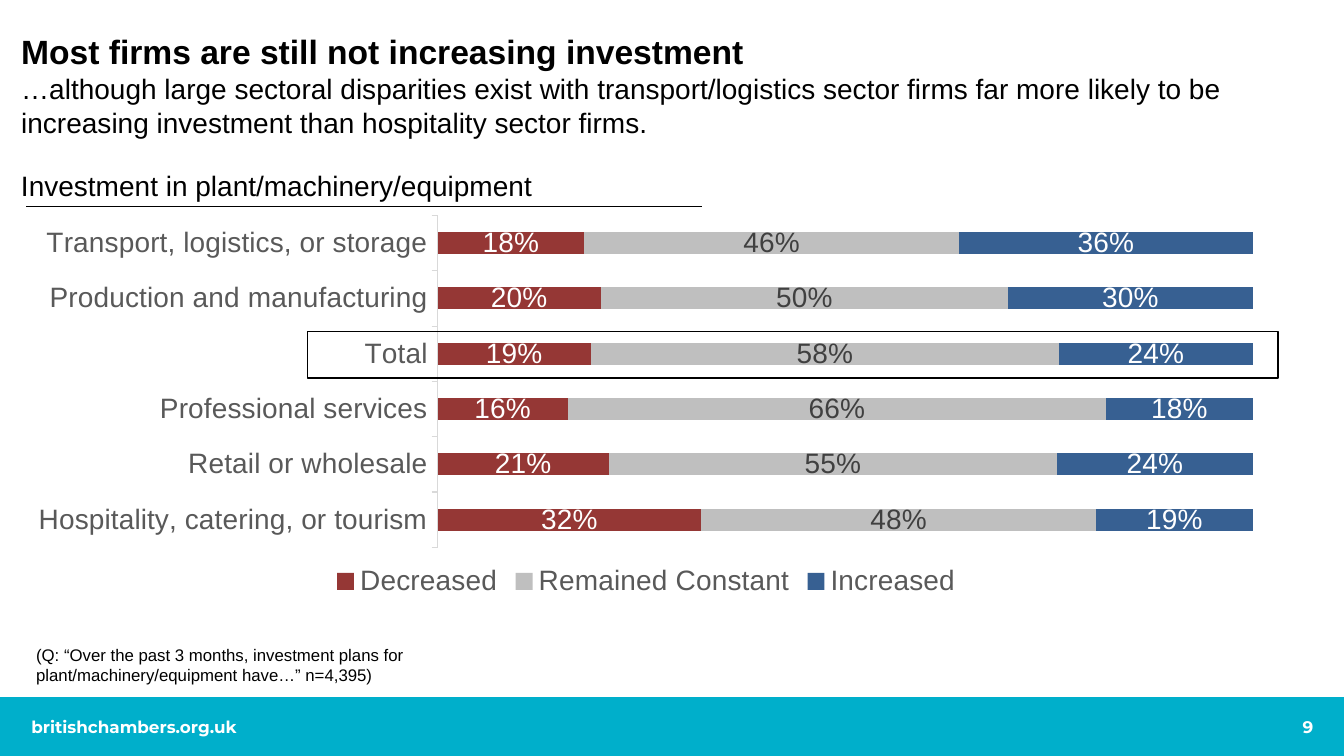
from lxml.etree import SubElement
from pptx import Presentation
from pptx.chart.data import CategoryChartData
from pptx.dml.color import RGBColor
from pptx.enum.chart import XL_CHART_TYPE as ChartType
from pptx.enum.chart import XL_LABEL_POSITION as LabelPosition
from pptx.enum.chart import XL_LEGEND_POSITION as LegendPosition
from pptx.enum.chart import XL_TICK_MARK as TickMark
from pptx.enum.shapes import MSO_CONNECTOR as Connector
from pptx.enum.shapes import MSO_SHAPE as Shape
from pptx.enum.text import MSO_ANCHOR as Anchor
from pptx.enum.text import MSO_AUTO_SIZE as AutoSize
from pptx.enum.text import PP_ALIGN as Align
from pptx.oxml import parse_xml
from pptx.oxml.ns import nsdecls, qn
from pptx.util import Cm, Pt

BLACK = RGBColor(0x00, 0x00, 0x00)
WHITE = RGBColor(0xFF, 0xFF, 0xFF)
TEAL = RGBColor(0x00, 0xAF, 0xCB)
RED = RGBColor(0x95, 0x37, 0x35)
SILVER = RGBColor(0xBF, 0xBF, 0xBF)
BLUE = RGBColor(0x37, 0x60, 0x92)
CHARCOAL = RGBColor(0x40, 0x40, 0x40)
GREY = RGBColor(0x59, 0x59, 0x59)
PALE_GREY = RGBColor(0xD9, 0xD9, 0xD9)

HEADLINE = {"name": "Arial", "size": Pt(24), "bold": True, "color": BLACK}
BODY = {"name": "Arial", "size": Pt(20), "bold": False, "color": BLACK}
NOTE = BODY | {"size": Pt(12)}
FOOTER = {"name": "Montserrat", "size": Pt(12), "bold": True, "color": WHITE}

SECTORS = [
    "Hospitality, catering, or tourism",
    "Retail or wholesale",
    "Professional services",
    "Total",
    "Production and manufacturing",
    "Transport, logistics, or storage",
]
ANSWERS = [
    ("Decreased", [0.32, 0.21, 0.16, 0.19, 0.20, 0.18], RED, WHITE),
    ("Remained Constant", [0.48, 0.55, 0.66, 0.58, 0.50, 0.46], SILVER, CHARCOAL),
    ("Increased", [0.19, 0.24, 0.18, 0.24, 0.30, 0.36], BLUE, WHITE),
]
PLOT_AREA = {"x": 0.335, "y": 0.02, "w": 0.645, "h": 0.84}


def format_font(font, values):
    for key, value in values.items():
        if key == "color":
            font.color.rgb = value
        else:
            setattr(font, key, value)


def place(item, left, top, width, height):
    bounds = {"left": left, "top": top, "width": width, "height": height}
    for key, value in bounds.items():
        setattr(item, key, Cm(value))


def write(frame, lines, align=Align.LEFT):
    for number, (text, style) in enumerate(lines):
        para = frame.paragraphs[0] if number == 0 else frame.add_paragraph()
        para.alignment = align
        span = para.add_run()
        span.text = text
        format_font(span.font, style)


def add_title(page, bounds, lines):
    title = page.shapes.title
    place(title, *bounds)
    frame = title.text_frame
    settings = {"word_wrap": True, "auto_size": AutoSize.NONE, "vertical_anchor": Anchor.TOP}
    for key, value in settings.items():
        setattr(frame, key, value)
    write(frame, lines)


def add_text(page, bounds, text, style, align=Align.LEFT, tight=False):
    box = page.shapes.add_textbox(*map(Cm, bounds))
    frame = box.text_frame
    frame.word_wrap = True
    if tight:
        for side in ("left", "top", "right", "bottom"):
            setattr(frame, f"margin_{side}", Cm(0.1 if side == "top" else 0))
    write(frame, [(text, style)], align)


def add_rectangle(page, bounds, fill=None, line=None):
    box = page.shapes.add_shape(Shape.RECTANGLE, *map(Cm, bounds))
    box.shadow.inherit = False
    if fill is None:
        box.fill.background()
    else:
        box.fill.solid()
        box.fill.fore_color.rgb = fill
    if line is None:
        box.line.fill.background()
    else:
        box.line.color.rgb = line
        box.line.width = Pt(1)


def add_rule(page, left, top, right):
    rule = page.shapes.add_connector(Connector.STRAIGHT, Cm(left), Cm(top), Cm(right), Cm(top))
    rule.line.color.rgb = BLACK
    rule.line.width = Pt(0.5)
    SubElement(rule.element.spPr, qn("a:effectLst"))


def fix_plot_area(chart):
    plot_area = chart.element.xpath("c:chart/c:plotArea")[0]
    for layout in plot_area.findall(qn("c:layout")):
        plot_area.remove(layout)
    sizes = "".join(f'<c:{key} val="{value}"/>' for key, value in PLOT_AREA.items())
    plot_area.insert(0, parse_xml(
        f'<c:layout {nsdecls("c")}><c:manualLayout><c:layoutTarget val="inner"/>'
        f'<c:xMode val="edge"/><c:yMode val="edge"/>{sizes}</c:manualLayout></c:layout>'
    ))


def format_axes(chart):
    sector_axis = chart.category_axis
    sector_axis.major_tick_mark = TickMark.OUTSIDE
    sector_axis.has_major_gridlines = False
    sector_axis.format.line.color.rgb = PALE_GREY
    sector_axis.format.line.width = Pt(0.75)
    format_font(sector_axis.tick_labels.font, BODY | {"color": GREY})
    share_axis = chart.value_axis
    settings = {"visible": False, "has_major_gridlines": False,
                "minimum_scale": 0, "maximum_scale": 1}
    for key, value in settings.items():
        setattr(share_axis, key, value)


def format_series(series, fill, label_color):
    series.format.fill.solid()
    series.format.fill.fore_color.rgb = fill
    labels = series.data_labels
    settings = {"show_value": True, "position": LabelPosition.CENTER,
                "number_format": "0%", "number_format_is_linked": False}
    for key, value in settings.items():
        setattr(labels, key, value)
    format_font(labels.font, BODY | {"color": label_color})


def add_investment_chart(page, bounds):
    data = CategoryChartData(number_format="0%")
    data.categories = SECTORS
    for name, shares, _, _ in ANSWERS:
        data.add_series(name, shares)
    chart = page.shapes.add_chart(ChartType.BAR_STACKED_100, *map(Cm, bounds), data).chart
    chart.has_title = False
    format_font(chart.font, BODY)
    plot = chart.plots[0]
    for key, value in {"gap_width": 150, "overlap": 100, "vary_by_categories": False}.items():
        setattr(plot, key, value)
    for series, (_, _, fill, label_color) in zip(plot.series, ANSWERS):
        format_series(series, fill, label_color)
    format_axes(chart)
    chart.has_legend = True
    chart.legend.position = LegendPosition.BOTTOM
    chart.legend.include_in_layout = False
    format_font(chart.legend.font, BODY | {"color": GREY})
    fix_plot_area(chart)


def main():
    deck = Presentation()
    deck.slide_width, deck.slide_height = Cm(33.87), Cm(19.05)
    page = deck.slides.add_slide(deck.slide_layouts[5])

    add_rectangle(page, (0, 17.57, 33.87, 1.48), fill=TEAL)
    add_text(page, (30.94, 17.96, 2.16, 0.56), "9", FOOTER, Align.RIGHT, tight=True)
    add_text(page, (0.79, 17.96, 8.23, 0.56), "britishchambers.org.uk", FOOTER, tight=True)

    add_title(page, (0.28, 0.66, 33.3, 3), [
        ("Most firms are still not increasing investment", HEADLINE),
        ("…although large sectoral disparities exist with transport/logistics sector firms "
         "far more likely to be increasing investment than hospitality sector firms.", BODY),
    ])
    add_text(page, (0.28, 4.11, 16.26, 1.12), "Investment in plant/machinery/equipment", BODY)
    add_rule(page, 0.66, 5.21, 17.68)
    add_investment_chart(page, (0.36, 5.23, 31.85, 9.96))
    add_text(page, (0.66, 16.13, 13.28, 1.27),
             "(Q: “Over the past 3 months, investment plans for "
             "plant/machinery/equipment have…” n=4,395)", NOTE)
    add_rectangle(page, (7.75, 8.36, 24.46, 1.17), line=BLACK)

    deck.save("out.pptx")


if __name__ == "__main__":
    main()
